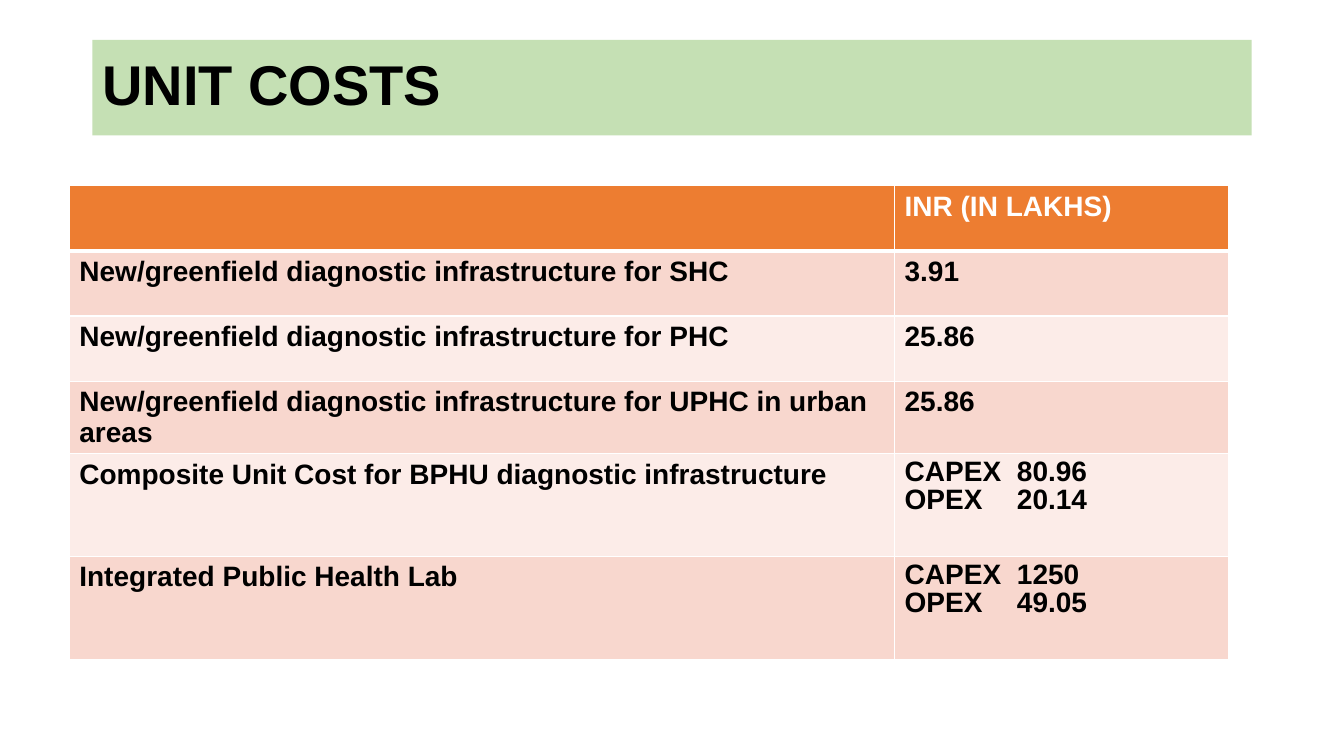
from lxml.etree import SubElement
from pptx import Presentation
from pptx.dml.color import RGBColor
from pptx.enum.text import MSO_ANCHOR, PP_ALIGN
from pptx.oxml.ns import qn
from pptx.util import Pt

PX = 9525
COSTS = [
    ("", "INR (IN LAKHS)"),
    ("New/greenfield diagnostic infrastructure for SHC", "3.91"),
    ("New/greenfield diagnostic infrastructure for PHC", "25.86"),
    ("New/greenfield diagnostic infrastructure for UPHC in urban areas", "25.86"),
    ("Composite Unit Cost for BPHU diagnostic infrastructure",
     "CAPEX\t80.96\nOPEX\t20.14"),
    ("Integrated Public Health Lab", "CAPEX\t1250\nOPEX\t49.05"),
]


def px(n):
    return n * PX


def color(code):
    return RGBColor.from_string(code)


def paint(fill, code):
    fill.solid()
    fill.fore_color.rgb = color(code)


def write(frame, text, size=20, ink="000000", space=None, tab=None):
    frame.text = text
    for para in frame.paragraphs:
        para.alignment = PP_ALIGN.LEFT
        para.line_spacing = space
        para.font.size = Pt(size)
        for run in para.runs:
            font = run.font
            font.name, font.size, font.bold = "Arial", Pt(size), True
            font.color.rgb = color(ink)
        if tab:
            stops = SubElement(para._p.get_or_add_pPr(), qn("a:tabLst"))
            SubElement(stops, qn("a:tab"), pos=str(px(tab)), algn="l")


def edge(cell, **widths):
    props = cell._tc.get_or_add_tcPr()
    for side in "LRTB":
        width = Pt(widths.get(side, 1))
        line = SubElement(props, qn(f"a:ln{side}"), w=str(width))
        fill = SubElement(line, qn("a:solidFill"))
        SubElement(fill, qn("a:srgbClr"), val="FFFFFF")


def add_title(slide, text, left, top, width, height):
    title = slide.shapes.title
    title.left, title.top = px(left), px(top)
    title.width, title.height = px(width), px(height)
    paint(title.fill, "C5E0B4")
    write(title.text_frame, text, size=40, space=0.9)
    title.text_frame.vertical_anchor = MSO_ANCHOR.MIDDLE


def add_costs(slide, left, top, width, height):
    tall = 98
    short = (height - 2 * tall) // 4
    table = slide.shapes.add_table(
        len(COSTS), 2, px(left), px(top), px(width), px(height)).table
    label = 786
    for col, wide in zip(table.columns, (label, width - label)):
        col.width = px(wide)
    for r, texts in enumerate(COSTS):
        split = "\n" in texts[1]
        table.rows[r].height = px(tall if split else short)
        for c, text in enumerate(texts):
            cell = table.cell(r, c)
            multi = "\n" in text
            write(cell.text_frame, text,
                  ink="000000" if r else "FFFFFF",
                  space=0.9 if multi else None, tab=107 if multi else None)
            edge(cell, B=1 if r else 3, T=3 if r == 1 else 1)
            shade = ("FCECE8", "F8D7CE")[r % 2] if r else "ED7D31"
            paint(cell.fill, shade)


def main():
    deck = Presentation()
    deck.slide_width, deck.slide_height = px(1280), px(720)
    slide = deck.slides.add_slide(deck.slide_layouts[5])
    add_title(slide, "UNIT COSTS", 88, 38, 1104, 91)
    add_costs(slide, 66, 177, 1104, 444)
    deck.save("out.pptx")


if __name__ == "__main__":
    main()
